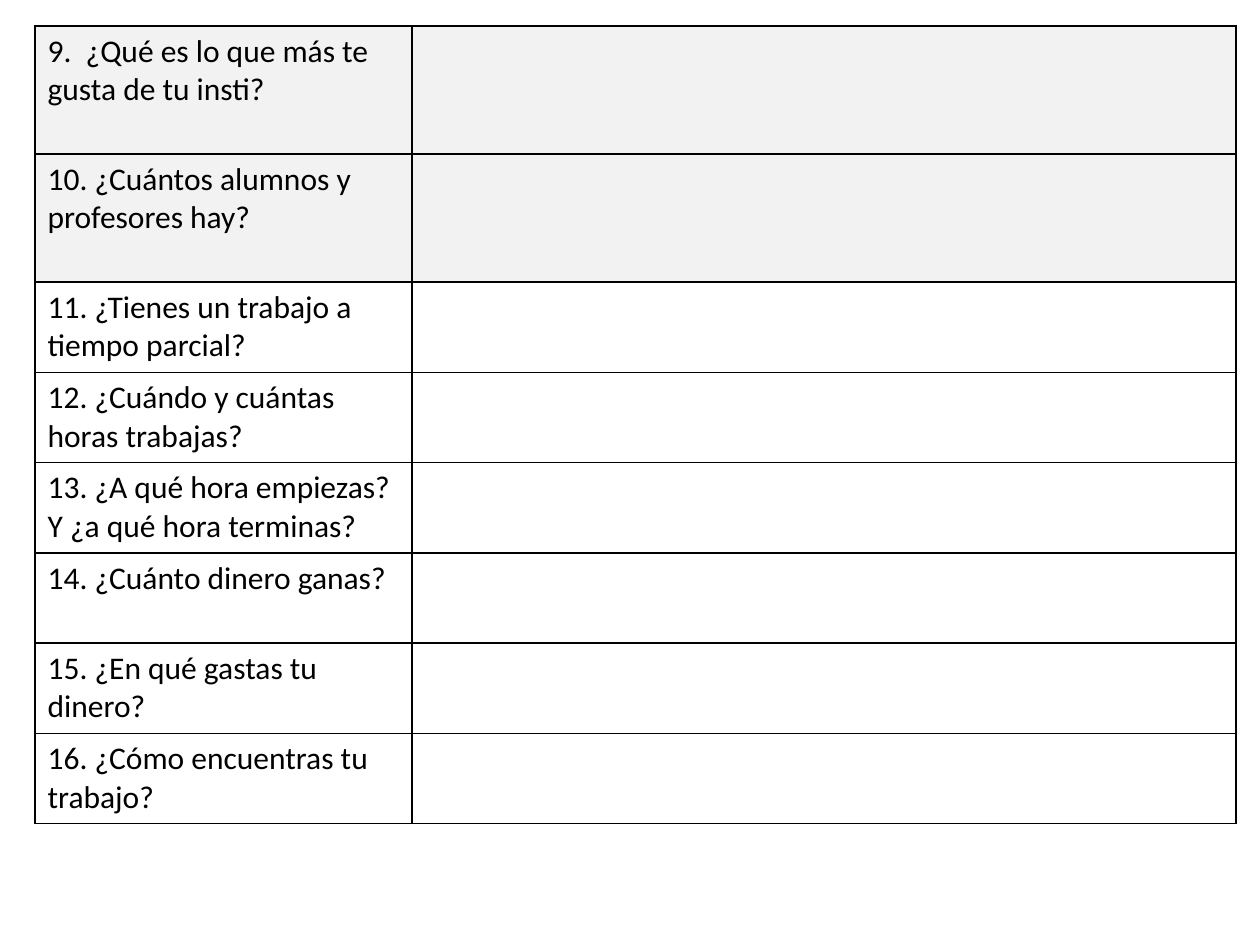
from dataclasses import dataclass
from typing import Optional

from lxml.etree import SubElement
from pptx import Presentation
from pptx.dml.color import RGBColor
from pptx.oxml.ns import qn
from pptx.table import Table, _Cell
from pptx.util import Pt

BLACK = RGBColor(0x00, 0x00, 0x00)
LIGHT_GREY = RGBColor(0xF2, 0xF2, 0xF2)

TABLE_LEFT, TABLE_TOP = 20, 15
COLUMN_WIDTHS = (215.3, 471)
TALL, SHORT = 73.1, 51.6


@dataclass(frozen=True)
class Question:
    text: str
    height: float = SHORT
    fill: Optional[RGBColor] = None


QUESTIONS = (
    Question("9.  ¿Qué es lo que más te gusta de tu insti?", TALL, LIGHT_GREY),
    Question("10. ¿Cuántos alumnos y profesores hay?", TALL, LIGHT_GREY),
    Question("11. ¿Tienes un trabajo a tiempo parcial?"),
    Question("12. ¿Cuándo y cuántas horas trabajas?"),
    Question("13. ¿A qué hora empiezas? Y ¿a qué hora terminas?"),
    Question("14. ¿Cuánto dinero ganas?"),
    Question("15. ¿En qué gastas tu dinero?"),
    Question("16. ¿Cómo encuentras tu trabajo?"),
)


def write_text(cell: _Cell, text: str, *, size: float = 18,
               font: str = "Calibri", color: RGBColor = BLACK) -> None:
    run = cell.text_frame.paragraphs[0].add_run()
    run.text = text
    run.font.size = Pt(size)
    run.font.name = font
    run.font.color.rgb = color


def format_cell(cell: _Cell, fill: Optional[RGBColor]) -> None:
    properties = cell._tc.get_or_add_tcPr()
    for side in ("a:lnL", "a:lnR", "a:lnT", "a:lnB"):
        border = SubElement(properties, qn(side), w=str(Pt(1)))
        solid = SubElement(border, qn("a:solidFill"))
        SubElement(solid, qn("a:srgbClr"), val=str(BLACK))
    if fill is None:
        cell.fill.background()
    else:
        cell.fill.solid()
        cell.fill.fore_color.rgb = fill


def draw_question(table: Table, index: int, question: Question) -> None:
    row = table.rows[index]
    row.height = Pt(question.height)
    for cell in row.cells:
        format_cell(cell, question.fill)
    write_text(row.cells[0], question.text)


def main() -> None:
    presentation = Presentation()
    presentation.slide_width, presentation.slide_height = Pt(720), Pt(540)
    slide = presentation.slides.add_slide(presentation.slide_layouts[6])
    questionnaire = slide.shapes.add_table(
        len(QUESTIONS), len(COLUMN_WIDTHS), Pt(TABLE_LEFT), Pt(TABLE_TOP),
        Pt(sum(COLUMN_WIDTHS)), Pt(sum(q.height for q in QUESTIONS))).table
    questionnaire.first_row = False
    questionnaire.horz_banding = False
    for column, width in zip(questionnaire.columns, COLUMN_WIDTHS):
        column.width = Pt(width)
    for index, question in enumerate(QUESTIONS):
        draw_question(questionnaire, index, question)
    presentation.save("out.pptx")


if __name__ == "__main__":
    main()
